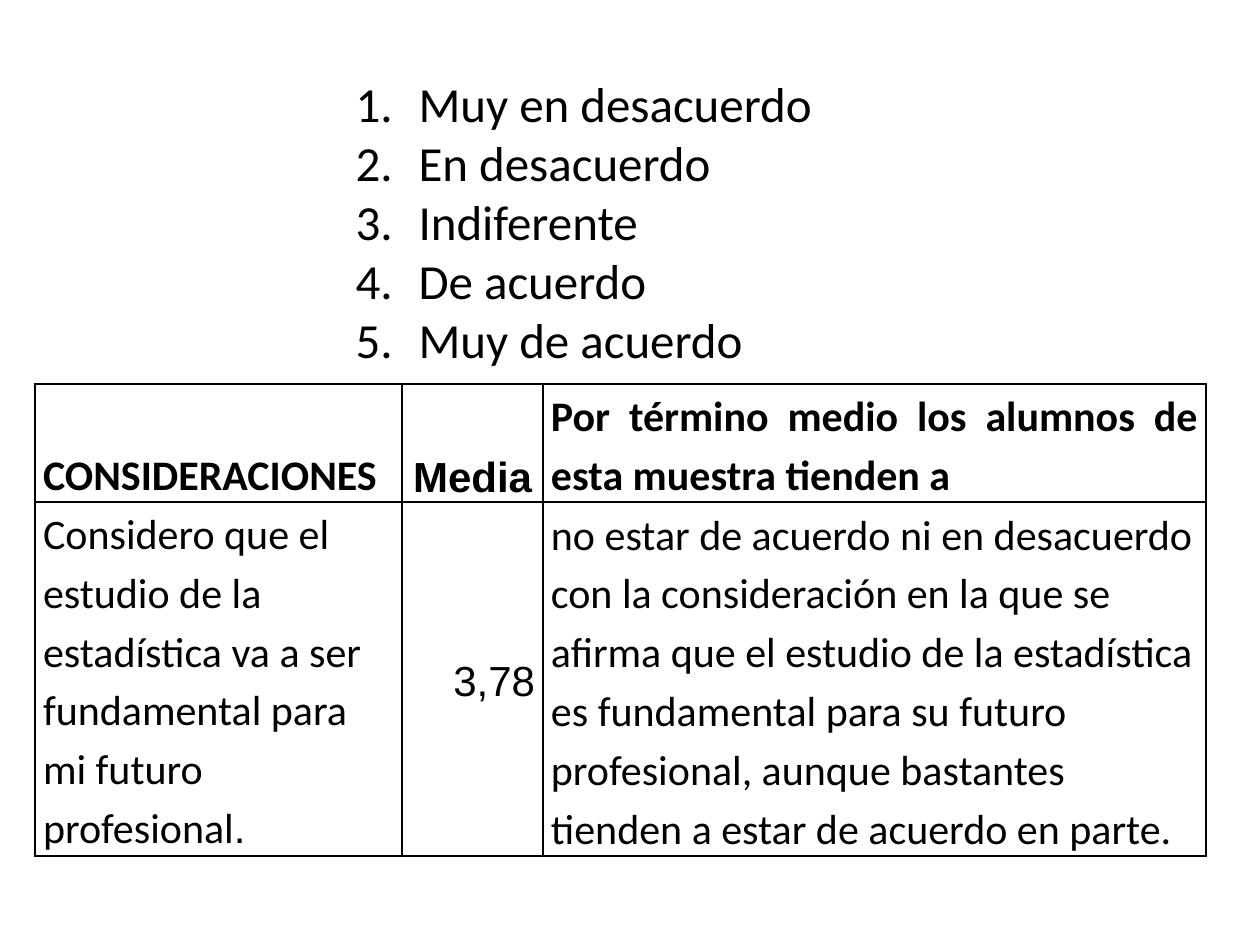
"""Build a slide with a five-point agreement scale and a table of its mean score."""
from dataclasses import dataclass

import lxml.etree
import pptx
import pptx.dml.color
import pptx.enum.text
import pptx.oxml
import pptx.oxml.ns
import pptx.util

EMU_PER_PX = 914400 / 126
BLACK = pptx.dml.color.RGBColor(0x00, 0x00, 0x00)
WHITE = pptx.dml.color.RGBColor(0xFF, 0xFF, 0xFF)
ALIGN = pptx.enum.text.PP_ALIGN
ANCHOR = pptx.enum.text.MSO_ANCHOR

SCALE = ["Muy en desacuerdo", "En desacuerdo", "Indiferente", "De acuerdo", "Muy de acuerdo"]
COLUMN_WIDTHS = [367, 141, 663]
ROW_HEIGHTS = [117, 354]
LIST_INDENT = 63
CELL_MARGIN = 8


@dataclass
class CellText:
    """Text of one table cell with its format."""

    text: str
    anchor: ANCHOR = ANCHOR.BOTTOM
    alignment: ALIGN = ALIGN.LEFT
    font: str = "Calibri"
    bold: bool = False
    ending: str = ""


ROWS = [
    [
        CellText("CONSIDERACIONES", bold=True),
        CellText("Media", alignment=ALIGN.CENTER, font="Arial", bold=True),
        CellText("Por término medio los alumnos de esta muestra tienden a",
                 anchor=ANCHOR.TOP, alignment=ALIGN.JUSTIFY, bold=True),
    ],
    [
        CellText("Considero que el estudio de la estadística va a ser fundamental "
                 "para mi futuro profesional", anchor=ANCHOR.TOP, ending="."),
        CellText("3,78", anchor=ANCHOR.MIDDLE, alignment=ALIGN.RIGHT, font="Arial"),
        CellText("no estar de acuerdo ni en desacuerdo con la consideración en la que se "
                 "afirma que el estudio de la estadística es fundamental para su futuro "
                 "profesional, aunque bastantes tienden a estar de acuerdo en parte."),
    ],
]


def px(length: int) -> pptx.util.Emu:
    """Turn pixels into EMU."""
    return pptx.util.Emu(round(length * EMU_PER_PX))


def apply_format(target: object, values: dict) -> None:
    """Set each attribute of the target from the values."""
    for name, value in values.items():
        setattr(target, name, value)


def add_run(paragraph, text: str, font: str, size: int, bold: bool = False) -> None:
    """Add a black run to the paragraph."""
    run = paragraph.add_run()
    run.text = text
    apply_format(run.font, {"name": font, "size": pptx.util.Pt(size), "bold": bold})
    run.font.color.rgb = BLACK


def fill_scale(shape) -> None:
    """Write the numbered scale into the body placeholder."""
    apply_format(shape, {"left": px(343), "top": px(66), "width": px(625), "height": px(310)})
    frame = shape.text_frame
    apply_format(frame, {"vertical_anchor": ANCHOR.MIDDLE, "word_wrap": True,
                         "auto_size": pptx.enum.text.MSO_AUTO_SIZE.NONE})
    for index, answer in enumerate(SCALE):
        paragraph = frame.add_paragraph() if index else frame.paragraphs[0]
        paragraph.space_before = pptx.util.Pt(0)
        add_run(paragraph, answer, "Calibri", 28)
        properties = paragraph._p.get_or_add_pPr()
        properties.set("marL", str(px(LIST_INDENT)))
        properties.set("indent", str(-px(LIST_INDENT)))
        lxml.etree.SubElement(properties, pptx.oxml.ns.qn("a:buFont"), typeface="+mj-lt")
        lxml.etree.SubElement(properties, pptx.oxml.ns.qn("a:buAutoNum"), type="arabicPeriod")


def add_borders(cell) -> None:
    """Draw a thin black line on every side of the cell."""
    properties = cell._tc.get_or_add_tcPr()
    for position, side in enumerate("LRTB"):
        line = pptx.oxml.parse_xml(
            f'<a:ln{side} {pptx.oxml.ns.nsdecls("a")} w="{pptx.util.Pt(1)}">'
            f'<a:solidFill><a:srgbClr val="{BLACK}"/></a:solidFill></a:ln{side}>')
        properties.insert(position, line)


def fill_cell(cell, content: CellText) -> None:
    """Write and format one table cell."""
    apply_format(cell, {"margin_left": px(CELL_MARGIN), "margin_right": px(CELL_MARGIN),
                        "margin_top": 0, "margin_bottom": 0,
                        "vertical_anchor": content.anchor})
    cell.fill.solid()
    cell.fill.fore_color.rgb = WHITE
    add_borders(cell)
    paragraph = cell.text_frame.paragraphs[0]
    apply_format(paragraph, {"alignment": content.alignment, "line_spacing": 1.15})
    add_run(paragraph, content.text, content.font, 24, content.bold)
    if content.ending:
        add_run(paragraph, content.ending, "Arial", 24, content.bold)


def add_results_table(slide) -> None:
    """Add the table of considerations and mean score."""
    frame = slide.shapes.add_table(len(ROWS), len(COLUMN_WIDTHS), px(35), px(384),
                                   px(sum(COLUMN_WIDTHS)), px(sum(ROW_HEIGHTS)))
    table = frame.table
    apply_format(table, {"first_row": False, "horz_banding": False})
    for column, width in zip(table.columns, COLUMN_WIDTHS):
        column.width = px(width)
    for row, height, contents in zip(table.rows, ROW_HEIGHTS, ROWS):
        row.height = px(height)
        for cell, content in zip(row.cells, contents):
            fill_cell(cell, content)


def main() -> None:
    """Build and save the presentation."""
    presentation = pptx.Presentation()
    apply_format(presentation, {"slide_width": px(1260), "slide_height": px(945)})
    slide = presentation.slides.add_slide(presentation.slide_layouts[1])
    title = slide.shapes.title.element
    title.getparent().remove(title)
    add_results_table(slide)
    fill_scale(slide.placeholders[1])
    presentation.save("out.pptx")


if __name__ == "__main__":
    main()
